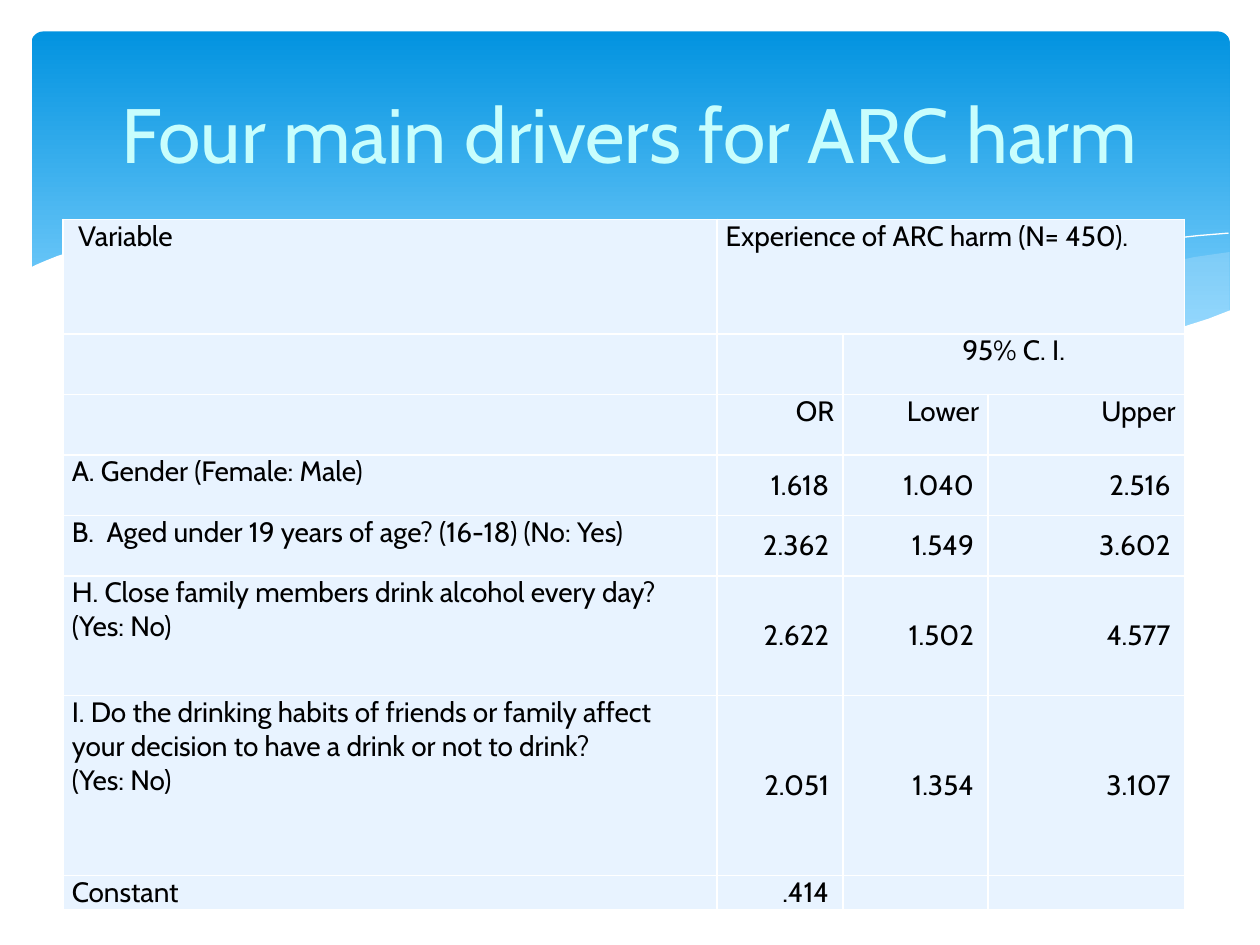
from lxml import etree
from pptx import Presentation
from pptx.dml.color import RGBColor
from pptx.enum import shapes, text
from pptx.oxml.ns import qn
from pptx.util import Inches, Pt

FONT = "Cabin"
WHITE = RGBColor(0xFF, 0xFF, 0xFF)
BLACK = RGBColor(0, 0, 0)
BLUE_TOP = RGBColor(0x02, 0x93, 0xE0)
BLUE_BOTTOM = RGBColor(0x83, 0xD3, 0xFE)
PALE_WAVE = RGBColor(0xC6, 0xE7, 0xFC)
CELL_FILL = RGBColor(0xE8, 0xF3, 0xFF)
TITLE_COLOR = RGBColor(0xC8, 0xFE, 0xFD)

# Content
TITLE = "Four main drivers for ARC harm"
ROWS = [
    (" Variable", "Experience of ARC harm (N= 450).", "", ""),
    ("", "", "95% C. I.", ""),
    ("", "OR", "Lower", "Upper"),
    ("A. Gender (Female: Male)", "1.618", "1.040", "2.516"),
    ("B.  Aged under 19 years of age? (16-18) (No: Yes)", "2.362", "1.549", "3.602"),
    ("H. Close family members drink alcohol every day? (Yes: No)",
     "2.622", "1.502", "4.577"),
    ("I. Do the drinking habits of friends or family affect your decision "
     "to have a drink or not to drink?\n(Yes: No)", "2.051", "1.354", "3.107"),
    ("Constant", ".414", "", ""),
]
COL_WIDTHS = [5.19, 1, 1.15, 1.56]
ROW_HEIGHTS = [0.91, 0.48, 0.48, 0.48, 0.48, 0.95, 1.43, 0.27]
MERGES = [((0, 1), (0, 3)), ((1, 2), (1, 3))]
FIRST_DATA_ROW = 3

# Waves: points in inches, fill with its opacity in percent
RIGHT_WAVE = [
    (9.76, 2), (9.48, 2.04), (9.21, 2.1), (8.91, 2.16), (8.61, 2.23), (8.05, 2.37),
    (7.53, 2.48), (7.06, 2.57), (6.61, 2.65), (6.91, 2.69), (7.32, 2.74),
    (7.69, 2.77), (8.03, 2.78), (8.44, 2.77), (8.81, 2.73), (9.13, 2.67),
    (9.42, 2.59), (9.63, 2.52), (9.76, 2.47)]
MIDDLE_WAVE = [
    (8.93, 2.73), (8.37, 2.65), (7.75, 2.54), (7.06, 2.4), (6.29, 2.22), (5.84, 2.11),
    (5.41, 2.03), (5.02, 1.96), (4.65, 1.91), (4.2, 1.87), (3.8, 1.85), (3.44, 1.86),
    (3.13, 1.88), (2.86, 1.91), (3.23, 1.96), (3.62, 2.03), (4.04, 2.11),
    (4.49, 2.22), (5.3, 2.4), (6.01, 2.55), (6.5, 2.64), (6.95, 2.7), (7.36, 2.75),
    (7.73, 2.77), (8.07, 2.78), (8.38, 2.78), (8.67, 2.76)]
LONG_LINE = [
    (3.09, 1.95), (3.28, 1.92), (3.53, 1.89), (3.87, 1.87), (4.33, 1.87), (4.69, 1.89),
    (5.1, 1.92), (5.56, 1.97), (6.08, 2.04), (6.65, 2.13), (7.27, 2.26),
    (7.95, 2.41), (8.69, 2.61), (9.07, 2.72)]
SHORT_LINE = [
    (6.13, 2.57), (6.53, 2.46), (6.95, 2.35), (7.48, 2.23), (8.06, 2.1), (8.66, 1.99),
    (8.95, 1.94), (9.24, 1.9), (9.51, 1.87), (9.75, 1.85)]
WHITE_WAVE = [
    (9.77, 2.46), (9.59, 2.53), (9.4, 2.59), (9.2, 2.65), (8.99, 2.69), (8.75, 2.73),
    (8.5, 2.75), (8.09, 2.77), (7.61, 2.75), (7.08, 2.7), (6.48, 2.62), (5.79, 2.5),
    (5.03, 2.33), (4.47, 2.2), (3.91, 2.07), (3.4, 1.97), (2.92, 1.9), (2.5, 1.86),
    (2.11, 1.84), (1.77, 1.84), (1.46, 1.85), (1.19, 1.87), (0.95, 1.91),
    (0.76, 1.95), (0.59, 1.99), (0.46, 2.03), (0.36, 2.07), (0.29, 2.1),
    (0.23, 2.13), (0.23, 3.29), (9.77, 3.29)]
WAVES = [(RIGHT_WAVE, PALE_WAVE, 29), (MIDDLE_WAVE, PALE_WAVE, 40),
         (LONG_LINE, None, 100), (SHORT_LINE, None, 100), (WHITE_WAVE, WHITE, 100)]


def add_wave(s, points, color, opacity):
    """Filled outline, or an open white hairline when there is no color."""
    pts = [(Inches(x), Inches(y)) for x, y in points]
    fb = s.shapes.build_freeform(*pts[0])
    fb.add_line_segments(pts[1:], close=color is not None)
    sp = fb.convert_to_shape()
    sp.shadow.inherit = False
    if color is None:
        sp.fill.background()
        sp.line.color.rgb = WHITE
        sp.line.width = Pt(0)
        return
    sp.line.fill.background()
    sp.fill.solid()
    sp.fill.fore_color.rgb = color
    if opacity < 100:
        clr = sp._element.spPr.find(qn("a:solidFill"))[0]
        etree.SubElement(clr, qn("a:alpha"), val=str(opacity * 1000))


def set_font(font, size, color):
    font.name, font.size, font.color.rgb = FONT, Pt(size), color


def add_borders(cell):
    tc_pr = cell._tc.get_or_add_tcPr()
    for i, side in enumerate(("lnL", "lnR", "lnT", "lnB")):
        ln = etree.Element(qn("a:" + side), w=str(Pt(1)))
        fill = etree.SubElement(ln, qn("a:solidFill"))
        etree.SubElement(fill, qn("a:srgbClr"), val=str(WHITE))
        tc_pr.insert(i, ln)


def fill_cell(cell, value, row, col):
    cell.fill.solid()
    cell.fill.fore_color.rgb = CELL_FILL
    cell.margin_left = cell.margin_right = Inches(0.07)
    cell.margin_top = cell.margin_bottom = 0
    add_borders(cell)
    is_number = row >= FIRST_DATA_ROW and col > 0
    if is_number:
        cell.vertical_anchor = text.MSO_ANCHOR.MIDDLE
    cell.text_frame.text = value
    for p in cell.text_frame.paragraphs:
        if col > 0 and row > 0:
            p.alignment = text.PP_ALIGN.CENTER if row == 1 else text.PP_ALIGN.RIGHT
        if is_number:
            for side in ("marL", "marR"):
                p._p.get_or_add_pPr().set(side, str(Inches(0.04)))
        for r in p.runs:
            set_font(r.font, 16, BLACK)
        if not p.runs:  # keeps empty cells from stretching their row
            etree.SubElement(p._p, qn("a:endParaRPr"), sz="1600")


prs = Presentation()
prs.slide_width, prs.slide_height = Inches(10), Inches(7.5)
s = prs.slides.add_slide(prs.slide_layouts[6])

# Banner
banner = s.shapes.add_shape(shapes.MSO_SHAPE.ROUNDED_RECTANGLE, Inches(0.25),
                            Inches(0.25), Inches(9.51), Inches(2.7))
banner.adjustments[0] = 0.034
banner.shadow.inherit = False
banner.line.fill.background()
banner.fill.gradient()
banner.fill.gradient_angle = 270
for stop, (color, position) in zip(banner.fill.gradient_stops,
                                   [(BLUE_TOP, 0), (BLUE_BOTTOM, 0.9)]):
    stop.color.rgb, stop.position = color, position

for points, color, opacity in WAVES:
    add_wave(s, points, color, opacity)

# Table
tbl = s.shapes.add_table(len(ROWS), len(COL_WIDTHS), Inches(0.5), Inches(1.74),
                         Inches(sum(COL_WIDTHS)), Inches(sum(ROW_HEIGHTS))).table
tbl.first_row = tbl.horz_banding = False
for column, width in zip(tbl.columns, COL_WIDTHS):
    column.width = Inches(width)
for i, (row, height) in enumerate(zip(ROWS, ROW_HEIGHTS)):
    tbl.rows[i].height = Inches(height)
    for j, value in enumerate(row):
        fill_cell(tbl.cell(i, j), value, i, j)
for first, last in MERGES:
    tbl.cell(*first).merge(tbl.cell(*last))

# Title
tf = s.shapes.add_textbox(Inches(0.5), Inches(0.37), Inches(9), Inches(1.37)).text_frame
tf.word_wrap = True
tf.vertical_anchor = text.MSO_ANCHOR.MIDDLE
tf.text = TITLE
p = tf.paragraphs[0]
p.alignment = text.PP_ALIGN.CENTER
set_font(p.runs[0].font, 44, TITLE_COLOR)

prs.save("out.pptx")
